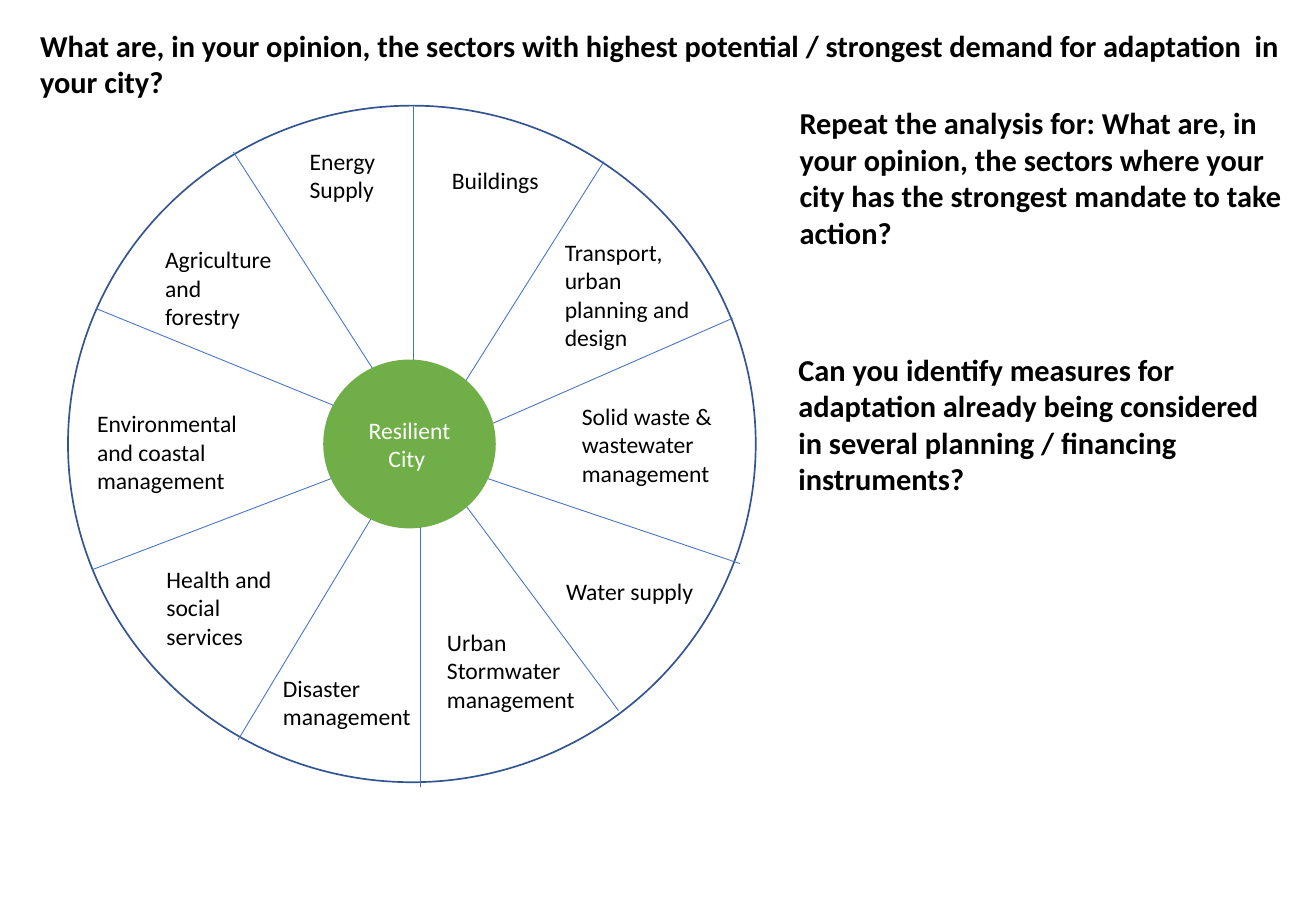
from dataclasses import dataclass
from typing import NamedTuple

from lxml.etree import SubElement
from pptx import Presentation
from pptx.dml.color import RGBColor
from pptx.enum.shapes import MSO_CONNECTOR, MSO_SHAPE
from pptx.enum.text import MSO_ANCHOR, MSO_AUTO_SIZE, PP_ALIGN
from pptx.oxml.ns import qn
from pptx.shapes.autoshape import Shape
from pptx.shapes.shapetree import GroupShapes
from pptx.util import Emu, Pt

EMU_PER_PX = 9144  # 100 px to the inch


@dataclass(frozen=True)
class Theme:
    font: str = "Calibri"
    question_size: Pt = Pt(18)
    label_size: Pt = Pt(14)
    text: RGBColor = RGBColor(0x00, 0x00, 0x00)
    hub_text: RGBColor = RGBColor(0xFF, 0xFF, 0xFF)
    hub: RGBColor = RGBColor(0x70, 0xAE, 0x47)
    rim: RGBColor = RGBColor(0x32, 0x54, 0x91)
    spoke: RGBColor = RGBColor(0x44, 0x72, 0xC4)
    rim_width: Pt = Pt(1)
    spoke_width: Pt = Pt(0.5)


class Box(NamedTuple):
    left: int
    top: int
    width: int
    height: int


class Spoke(NamedTuple):
    x1: int
    y1: int
    x2: int
    y2: int


class Label(NamedTuple):
    text: str
    box: Box
    wrap: bool = True


THEME = Theme()
SLIDE_WIDTH, SLIDE_HEIGHT = 1083, 750
RIM = Box(56, 87, 566, 557)
HUB = Box(266, 296, 142, 139)

QUESTIONS = [
    Label("What are, in your opinion, the sectors with highest potential / "
          "strongest demand for adaptation  in your city?", Box(23, 17, 1048, 71)),
    Label("Repeat the analysis for: What are, in your opinion, the sectors where "
          "your city has the strongest mandate to take action?", Box(648, 81, 435, 131)),
    Label("Can you identify measures for adaptation already being considered in "
          "several planning / financing instruments?", Box(647, 284, 411, 131)),
]

SPOKES = [
    Spoke(340, 342, 340, 87),
    Spoke(354, 360, 497, 133),
    Spoke(345, 375, 603, 262),
    Spoke(345, 375, 609, 464),
    Spoke(372, 401, 509, 585),
    Spoke(346, 393, 346, 648),
    Spoke(324, 396, 196, 609),
    Spoke(325, 374, 76, 469),
    Spoke(334, 358, 79, 254),
    Spoke(325, 332, 192, 125),
]

SECTORS = [
    Label("Buildings", Box(362, 132, 97, 34), wrap=False),
    Label("Transport, urban planning and design", Box(455, 191, 136, 104)),
    Label("Solid waste & wastewater management", Box(469, 326, 136, 81)),
    Label("Water supply", Box(456, 470, 130, 34), wrap=False),
    Label("Urban Stormwater management", Box(358, 512, 136, 81)),
    Label("Disaster management", Box(223, 550, 141, 57)),
    Label("Health and social services", Box(127, 460, 125, 81)),
    Label("Environmental and coastal management", Box(70, 332, 161, 81)),
    Label("Agriculture and forestry", Box(126, 197, 112, 81)),
    Label("Energy Supply", Box(245, 116, 84, 57)),
]


def px(*lengths: int) -> list[Emu]:
    return [Emu(length * EMU_PER_PX) for length in lengths]


def style_text(shape: Shape, size: Pt, color: RGBColor, bold: bool = False,
               align: PP_ALIGN = PP_ALIGN.LEFT, anchor: MSO_ANCHOR = MSO_ANCHOR.TOP,
               wrap: bool = True) -> None:
    frame = shape.text_frame
    frame.word_wrap = wrap
    frame.auto_size = MSO_AUTO_SIZE.NONE
    frame.vertical_anchor = anchor
    paragraph = frame.paragraphs[0]
    paragraph.alignment = align
    paragraph.font.name = THEME.font
    paragraph.font.size = size
    paragraph.font.bold = bold
    paragraph.font.color.rgb = color


def remove_bullet(shape: Shape) -> None:
    paragraph = shape.text_frame.paragraphs[0]
    paragraph.space_before = Pt(0)
    properties = paragraph._p.get_or_add_pPr()
    properties.set("marL", "0")
    properties.set("indent", "0")
    SubElement(properties, qn("a:buNone"))


def fill_question(placeholder: Shape, question: Label) -> None:
    placeholder.left, placeholder.top, placeholder.width, placeholder.height = px(*question.box)
    placeholder.text_frame.text = question.text
    remove_bullet(placeholder)
    style_text(placeholder, THEME.question_size, THEME.text, bold=True)


def add_ellipse(shapes: GroupShapes, box: Box) -> Shape:
    ellipse = shapes.add_shape(MSO_SHAPE.OVAL, *px(*box))
    ellipse.shadow.inherit = False
    return ellipse


def add_rim(shapes: GroupShapes) -> None:
    rim = add_ellipse(shapes, RIM)
    rim.fill.background()
    rim.line.color.rgb = THEME.rim
    rim.line.width = THEME.rim_width


def add_hub(shapes: GroupShapes) -> None:
    hub = add_ellipse(shapes, HUB)
    hub.fill.solid()
    hub.fill.fore_color.rgb = THEME.hub
    hub.line.fill.background()
    hub.text_frame.text = "Resilient City "
    style_text(hub, THEME.label_size, THEME.hub_text,
               align=PP_ALIGN.CENTER, anchor=MSO_ANCHOR.MIDDLE)


def add_spoke(shapes: GroupShapes, spoke: Spoke) -> None:
    line = shapes.add_connector(MSO_CONNECTOR.STRAIGHT, *px(*spoke))
    line.line.color.rgb = THEME.spoke
    line.line.width = THEME.spoke_width
    SubElement(line._element.spPr, qn("a:effectLst"))


def add_sector(shapes: GroupShapes, sector: Label) -> None:
    text_box = shapes.add_textbox(*px(*sector.box))
    text_box.text_frame.text = sector.text
    style_text(text_box, THEME.label_size, THEME.text, wrap=sector.wrap)


def main() -> None:
    presentation = Presentation()
    presentation.slide_width, presentation.slide_height = px(SLIDE_WIDTH, SLIDE_HEIGHT)
    two_content = presentation.slide_layouts.get_by_name("Two Content")
    slide = presentation.slides.add_slide(two_content)

    for placeholder, question in zip(slide.placeholders, QUESTIONS):
        fill_question(placeholder, question)

    wheel = slide.shapes.add_group_shape().shapes
    add_rim(wheel)
    for spoke in SPOKES:
        add_spoke(wheel, spoke)
    for sector in SECTORS:
        add_sector(wheel, sector)
    add_hub(wheel)

    presentation.save("out.pptx")


if __name__ == "__main__":
    main()
